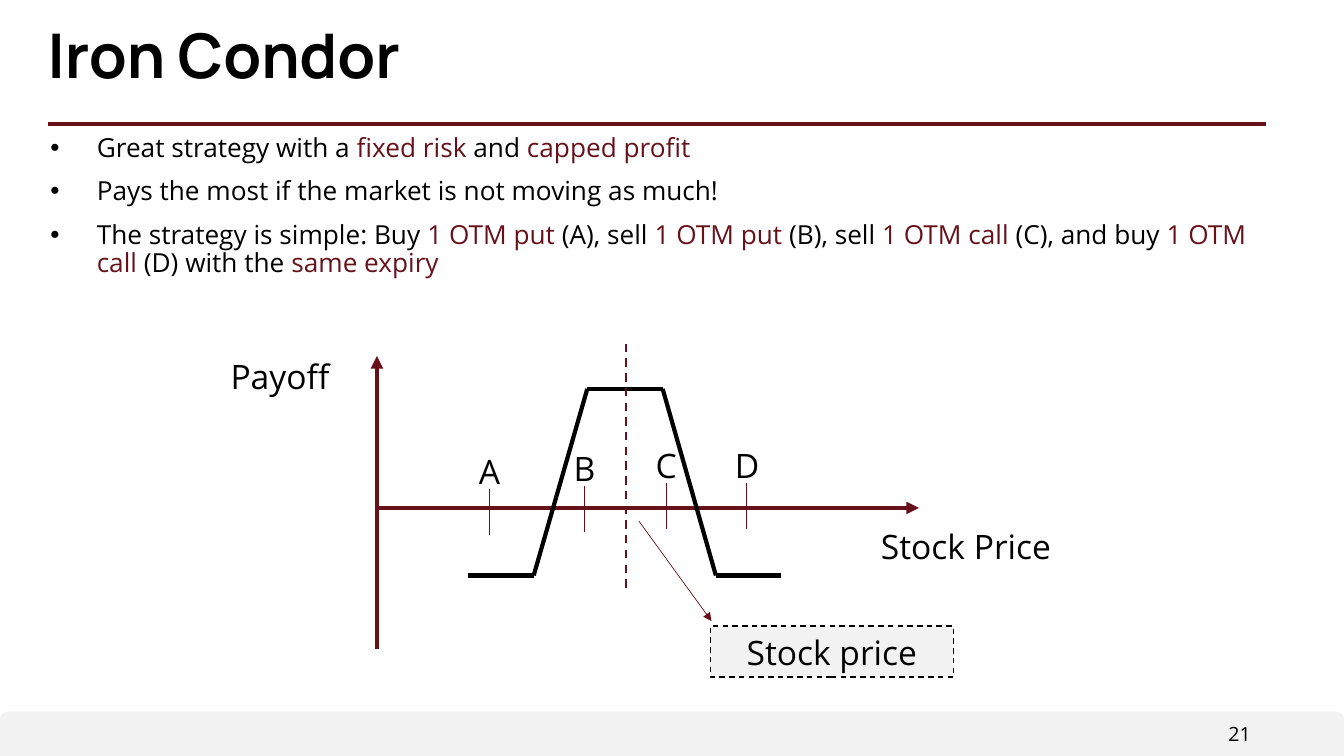
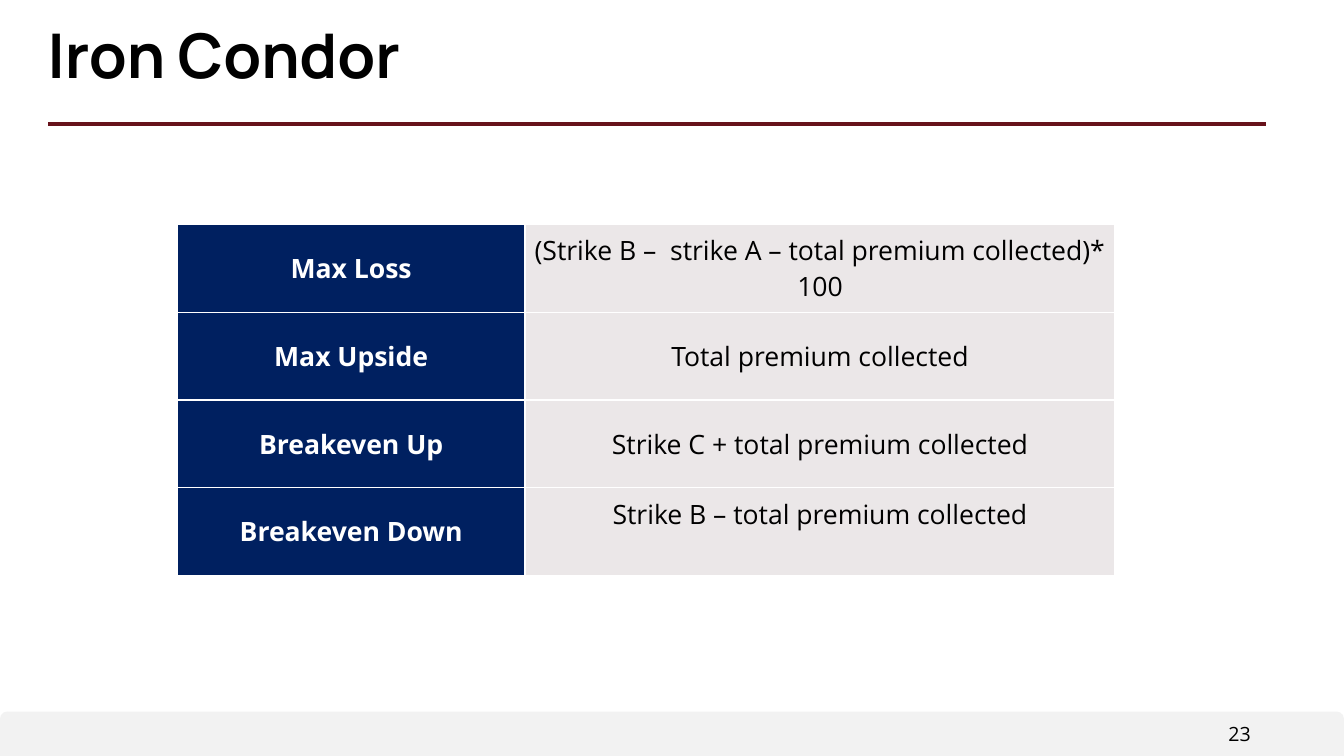
from itertools import pairwise

from lxml import etree
from pptx import Presentation
from pptx.dml.color import RGBColor
from pptx.enum.dml import MSO_LINE
from pptx.enum.shapes import MSO_CONNECTOR, MSO_SHAPE
from pptx.enum.text import MSO_ANCHOR, MSO_AUTO_SIZE, PP_ALIGN
from pptx.oxml.ns import qn
from pptx.util import Cm, Pt

COLORS = {
    "black": "000000",
    "white": "FFFFFF",
    "accent": "67121B",
    "band": "F2F2F2",
    "navy": "002060",
    "cell": "EBE7E8",
}
TITLE_FONT = "Manrope"
BODY_FONT = "Open Sans"
LEFT, CENTER, RIGHT = PP_ALIGN.LEFT, PP_ALIGN.CENTER, PP_ALIGN.RIGHT
TOP, MIDDLE = MSO_ANCHOR.TOP, MSO_ANCHOR.MIDDLE
NO_AUTOFIT = MSO_AUTO_SIZE.NONE
STRAIGHT = MSO_CONNECTOR.STRAIGHT
RECTANGLE = MSO_SHAPE.RECTANGLE
ROUNDED_TOP = MSO_SHAPE.ROUND_2_SAME_RECTANGLE
DASH = MSO_LINE.DASH

SLIDE_WIDTH, SLIDE_HEIGHT = 33.87, 19.05
BAND_HEIGHT = 1.12

# Each bullet alternates plain and highlighted text
BULLETS = [
    ["Great strategy with a ", "fixed risk ", "and ", "capped profit"],
    ["Pays the most if the market is not moving as much!"],
    ["The strategy is simple: Buy ", "1 OTM put", " (A), sell ", "1 OTM put ",
     "(B), sell ", "1 OTM call ", "(C), and buy ", "1 OTM call",
     " (D) with the ", "same expiry"],
]
# Strike letter, tick position, top of tick
STRIKES = [("A", 12.34, 12.32), ("B", 14.73, 12.24),
           ("C", 16.79, 12.17), ("D", 18.82, 12.17)]
PAYOFF_POINTS = [(11.8, 14.5), (13.45, 14.5), (14.8, 9.8),
                 (16.7, 9.8), (18.04, 14.5), (19.68, 14.5)]
OUTCOMES = [
    ("Max Loss", "(Strike B –  strike A – total premium collected)* 100"),
    ("Max Upside", "Total premium collected"),
    ("Breakeven Up", "Strike C + total premium collected"),
    ("Breakeven Down", "Strike B – total premium collected"),
]


def rgb(color):
    return RGBColor.from_string(COLORS[color])


def format_font(font, size, color="black", name=BODY_FONT, bold=False):
    font.name = name
    font.size = Pt(size)
    font.bold = bold
    font.color.rgb = rgb(color)


def set_margins(target, horizontal, vertical):
    target.margin_left = target.margin_right = Cm(horizontal)
    target.margin_top = target.margin_bottom = Cm(vertical)


def set_text(text_frame, text, size, align=LEFT):
    text_frame.word_wrap = True
    text_frame.text = text
    paragraph = text_frame.paragraphs[0]
    paragraph.alignment = align
    format_font(paragraph.runs[0].font, size)


def add_label(slide, text, left, top, width, height=1.27, size=24, align=LEFT):
    box = slide.shapes.add_textbox(Cm(left), Cm(top), Cm(width), Cm(height))
    set_text(box.text_frame, text, size, align)


def add_box(slide, kind, left, top, width, height):
    shape = slide.shapes.add_shape(kind, Cm(left), Cm(top), Cm(width), Cm(height))
    shape.shadow.inherit = False
    shape.fill.solid()
    shape.fill.fore_color.rgb = rgb("band")
    shape.line.fill.background()
    return shape


def add_line(slide, start, end, width, color="accent", arrow=False, dashed=False):
    x1, y1, x2, y2 = (Cm(value) for value in (*start, *end))
    connector = slide.shapes.add_connector(STRAIGHT, x1, y1, x2, y2)
    line = connector.line
    line.color.rgb = rgb(color)
    line.width = Pt(width)
    if dashed:
        line.dash_style = DASH
    properties = connector._element.spPr
    if arrow:
        outline = properties.find(qn("a:ln"))
        etree.SubElement(outline, qn("a:tailEnd"), type="triangle")
    etree.SubElement(properties, qn("a:effectLst"))


def add_titled_slide(presentation, title_text, number):
    slide = presentation.slides.add_slide(presentation.slide_layouts[5])

    # Footer band, slide number and title rule
    band_top = SLIDE_HEIGHT - BAND_HEIGHT
    add_box(slide, ROUNDED_TOP, 0, band_top, SLIDE_WIDTH, BAND_HEIGHT)
    add_label(slide, number, 27.48, 18.06, 4.29, 0.86, size=14, align=RIGHT)
    add_line(slide, (1.22, 3.12), (31.9, 3.12), 2.5)

    # Title
    title = slide.shapes.title
    title.left, title.top = Cm(1.02), Cm(0.53)
    title.width, title.height = Cm(31.52), Cm(2.31)
    text_frame = title.text_frame
    text_frame.text = title_text
    text_frame.auto_size = NO_AUTOFIT
    text_frame.vertical_anchor = TOP
    set_margins(text_frame, 0.18, 0.1)
    paragraph = text_frame.paragraphs[0]
    paragraph.alignment = LEFT
    paragraph.line_spacing = 0.9
    format_font(paragraph.runs[0].font, 44, name=TITLE_FONT, bold=True)
    return slide


def make_bullet(paragraph):
    properties = paragraph._p.get_or_add_pPr()
    properties.set("marL", str(Cm(1.7)))
    properties.set("indent", str(Cm(-1.17)))
    bullet_color = etree.SubElement(properties, qn("a:buClr"))
    etree.SubElement(bullet_color, qn("a:srgbClr"), val=COLORS["black"])
    etree.SubElement(properties, qn("a:buFont"), typeface="Arial")
    etree.SubElement(properties, qn("a:buChar"), char="•")


def add_bullets(slide, bullets):
    box = slide.shapes.add_textbox(Cm(0.56), Cm(3.3), Cm(31.52), Cm(4.2))
    text_frame = box.text_frame
    text_frame.word_wrap = True
    set_margins(text_frame, 0.18, 0.1)
    for index, parts in enumerate(bullets):
        paragraph = text_frame.add_paragraph() if index else text_frame.paragraphs[0]
        paragraph.line_spacing = 0.9
        paragraph.space_before = Pt(10.7 if index else 0)
        make_bullet(paragraph)
        for position, text in enumerate(parts):
            run = paragraph.add_run()
            run.text = text
            format_font(run.font, 18.7, "accent" if position % 2 else "black")


def add_payoff_diagram(slide):
    # Axes
    add_label(slide, "Stock Price", 21.95, 13.13, 6.58)
    add_label(slide, "Payoff", 5.56, 8.84, 4.11)
    add_line(slide, (9.5, 16.36), (9.5, 8.97), 3, arrow=True)
    add_line(slide, (9.5, 12.8), (23.16, 12.8), 3, arrow=True)

    # Payoff profile
    for start, end in pairwise(PAYOFF_POINTS):
        add_line(slide, start, end, 3, "black")

    # Strikes
    for letter, x, tick_top in STRIKES:
        add_label(slide, letter, x - 0.55, tick_top - 1.08, 1.1, align=CENTER)
        add_line(slide, (x, tick_top + 1.17), (x, tick_top), 0.5)

    # Current stock price
    add_line(slide, (15.77, 8.66), (15.77, 14.86), 1.5, dashed=True)
    add_line(slide, (16.1, 13.13), (17.93, 15.65), 0.5, arrow=True)
    callout = add_box(slide, RECTANGLE, 17.9, 15.78, 6.13, 1.28)
    callout.line.color.rgb = rgb("black")
    callout.line.width = Pt(1)
    callout.line.dash_style = DASH
    set_text(callout.text_frame, "Stock price", 24, CENTER)


def set_borders(cell):
    properties = cell._tc.get_or_add_tcPr()
    for index, edge in enumerate(("a:lnL", "a:lnR", "a:lnT", "a:lnB")):
        border = etree.Element(qn(edge), w=str(Pt(1)))
        fill = etree.SubElement(border, qn("a:solidFill"))
        etree.SubElement(fill, qn("a:srgbClr"), val=COLORS["white"])
        properties.insert(index, border)


def format_cell(cell, text, fill, color, bold):
    cell.text = text
    cell.fill.solid()
    cell.fill.fore_color.rgb = rgb(fill)
    cell.vertical_anchor = MIDDLE
    set_margins(cell, 0.03, 0.02)
    set_borders(cell)
    paragraph = cell.text_frame.paragraphs[0]
    paragraph.alignment = CENTER
    format_font(paragraph.runs[0].font, 19, color, bold=bold)


def add_outcome_table(slide, rows):
    widths, row_height = (8.76, 14.87), 2.21
    frame = slide.shapes.add_table(len(rows), len(widths), Cm(4.47), Cm(5.66),
                                   Cm(sum(widths)), Cm(row_height * len(rows)))
    table = frame.table
    table.first_row = table.horz_banding = False
    for column, width in zip(table.columns, widths):
        column.width = Cm(width)
    for index, (name, formula) in enumerate(rows):
        table.rows[index].height = Cm(row_height)
        format_cell(table.cell(index, 0), name, "navy", "white", True)
        format_cell(table.cell(index, 1), formula, "cell", "black", False)

    # The last formula sits near the top of its cell
    last_formula = table.cell(len(rows) - 1, 1)
    last_formula.vertical_anchor = TOP
    last_formula.margin_top = Cm(0.2)


def main():
    presentation = Presentation()
    presentation.slide_width = Cm(SLIDE_WIDTH)
    presentation.slide_height = Cm(SLIDE_HEIGHT)

    strategy_slide = add_titled_slide(presentation, "Iron Condor", "21")
    add_bullets(strategy_slide, BULLETS)
    add_payoff_diagram(strategy_slide)

    outcome_slide = add_titled_slide(presentation, "Iron Condor", "23")
    add_outcome_table(outcome_slide, OUTCOMES)

    presentation.save("out.pptx")


if __name__ == "__main__":
    main()
